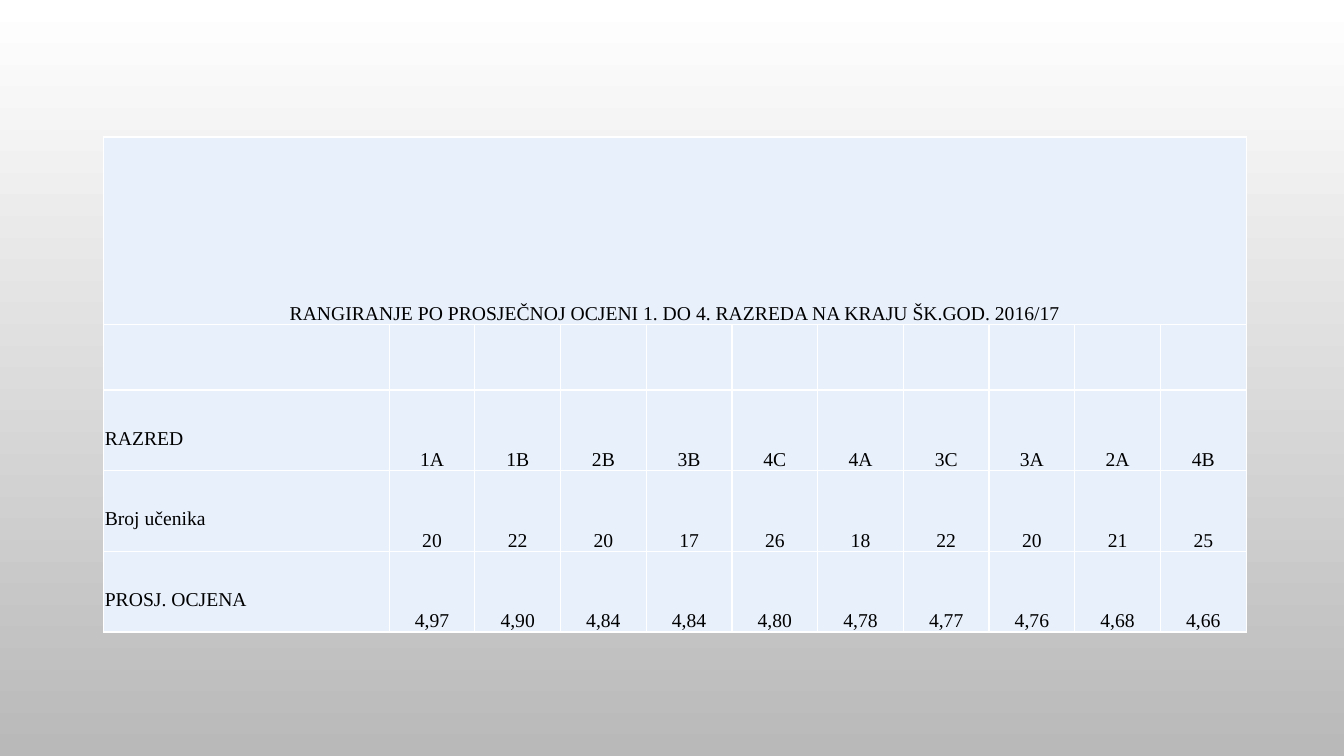
from pptx import Presentation
from pptx.dml.color import RGBColor
from pptx.enum.text import MSO_ANCHOR, PP_ALIGN
from pptx.oxml import parse_xml
from pptx.oxml.ns import nsdecls
from pptx.util import Inches, Pt

TITLE = "RANGIRANJE PO PROSJEČNOJ OCJENI 1. DO 4. RAZREDA NA KRAJU ŠK.GOD. 2016/17"
RANKS = [
    ("RAZRED", "1A 1B 2B 3B 4C 4A 3C 3A 2A 4B"),
    ("Broj učenika", "20 22 20 17 26 18 22 20 21 25"),
    ("PROSJ. OCJENA", "4,97 4,90 4,84 4,84 4,80 4,78 4,77 4,76 4,68 4,66"),
]
GRID = [[TITLE], []] + [[label] + marks.split() for label, marks in RANKS]

COLORS = {"top": "FFFFFF", "bottom": "B9B9B9", "cell": "E8F0FC",
          "border": "FFFFFF", "text": "000000"}
FONT, SIZE = "Times New Roman", 14
LEFT, TOP = 1.03, 1.36
WIDTHS = [2.83] + [0.85] * 10
HEIGHTS = [1.86, 0.65] + [0.8] * 3
INSET = 0.01
LIFT = 0.21  # labels sit one text line above the marks


def color(name):
    return RGBColor.from_string(COLORS[name])


def add_borders(cell):
    props = cell._tc.get_or_add_tcPr()
    for i, side in enumerate(("lnL", "lnR", "lnT", "lnB")):
        props.insert(i, parse_xml(
            f'<a:{side} {nsdecls("a")} w="{Pt(1)}"><a:solidFill>'
            f'<a:srgbClr val="{COLORS["border"]}"/></a:solidFill></a:{side}>'))


def fill_cell(cell, text, align, lift):
    cell.fill.solid()
    cell.fill.fore_color.rgb = color("cell")
    add_borders(cell)
    cell.vertical_anchor = MSO_ANCHOR.BOTTOM
    cell.margin_left = cell.margin_right = cell.margin_top = Inches(INSET)
    cell.margin_bottom = Inches(lift)
    cell.text_frame.text = text
    para = cell.text_frame.paragraphs[0]
    para.alignment = align
    para.font.size = Pt(SIZE)
    for run in para.runs:
        run.font.name = FONT
        run.font.size = Pt(SIZE)
        run.font.bold = False
        run.font.color.rgb = color("text")


def main():
    deck = Presentation()
    deck.slide_width, deck.slide_height = Inches(13.33), Inches(7.5)
    slide = deck.slides.add_slide(deck.slide_layouts[6])

    back = slide.background.fill
    back.gradient()
    back.gradient_angle = 270
    for stop, name in zip(back.gradient_stops, ("top", "bottom")):
        stop.color.rgb = color(name)

    table = slide.shapes.add_table(
        len(HEIGHTS), len(WIDTHS), Inches(LEFT), Inches(TOP),
        Inches(sum(WIDTHS)), Inches(sum(HEIGHTS))).table
    table.first_row = table.horz_banding = False
    for col, width in zip(table.columns, WIDTHS):
        col.width = Inches(width)
    for row, height in zip(table.rows, HEIGHTS):
        row.height = Inches(height)
    table.cell(0, 0).merge(table.cell(0, len(WIDTHS) - 1))

    for r, texts in enumerate(GRID):
        for c in range(len(WIDTHS)):
            label = r > 1 and c == 0
            fill_cell(table.cell(r, c), texts[c] if c < len(texts) else "",
                      PP_ALIGN.LEFT if label else PP_ALIGN.CENTER,
                      LIFT if label else 0)

    deck.save("out.pptx")


if __name__ == "__main__":
    main()
